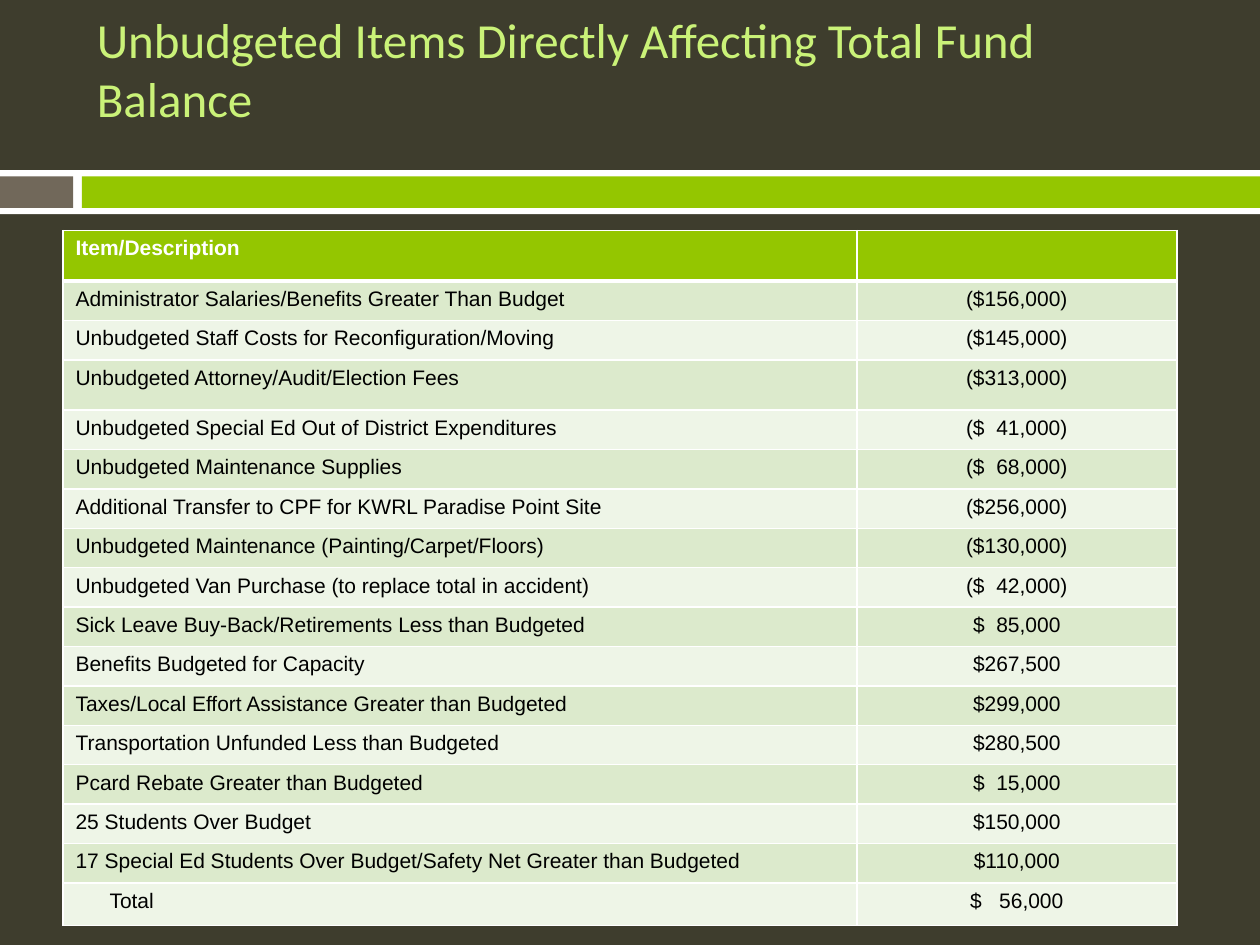
from pptx import Presentation
from pptx.dml.color import RGBColor as RGB
from pptx.enum.shapes import MSO_SHAPE as Shape
from pptx.enum.text import MSO_ANCHOR as Anchor, PP_ALIGN as Align
from pptx.oxml import parse_xml
from pptx.oxml.ns import nsdecls
from pptx.util import Inches, Pt

DARK = RGB(0x3E, 0x3D, 0x2D)
WHITE = RGB(0xFF, 0xFF, 0xFF)
BLACK = RGB(0, 0, 0)
BROWN = RGB(0x71, 0x68, 0x5A)
GREEN = RGB(0x94, 0xC6, 0x00)
LIME = RGB(0xCA, 0xF2, 0x78)
BANDS = [RGB(0xDC, 0xEA, 0xCC), RGB(0xEE, 0xF5, 0xE7)]

ITEMS = [
    ("Administrator Salaries/Benefits Greater Than Budget", "($156,000)"),
    ("Unbudgeted Staff Costs for Reconfiguration/Moving", "($145,000)"),
    ("Unbudgeted Attorney/Audit/Election Fees", "($313,000)"),
    ("Unbudgeted Special Ed Out of District Expenditures", "($  41,000)"),
    ("Unbudgeted Maintenance Supplies", "($  68,000)"),
    ("Additional Transfer to CPF for KWRL Paradise Point Site", "($256,000)"),
    ("Unbudgeted Maintenance (Painting/Carpet/Floors)", "($130,000)"),
    ("Unbudgeted Van Purchase (to replace total in accident)", "($  42,000)"),
    ("Sick Leave Buy-Back/Retirements Less than Budgeted", "$  85,000"),
    ("Benefits Budgeted for Capacity", "$267,500"),
    ("Taxes/Local Effort Assistance Greater than Budgeted", "$299,000"),
    ("Transportation Unfunded Less than Budgeted", "$280,500"),
    ("Pcard Rebate Greater than Budgeted", "$  15,000"),
    ("25 Students Over Budget", "$150,000"),
    ("17 Special Ed Students Over Budget/Safety Net Greater than Budgeted",
     "$110,000"),
    ("Total", "$   56,000"),
]
ROWS = [("Item/Description", "")] + ITEMS


def style(para, font, size, color, bold=False):
    for run in para.runs:
        run.font.name = font
        run.font.size = Pt(size)
        run.font.color.rgb = color
        run.font.bold = bold


def edge(cell, top, base):
    # Borders come before the fill in the cell properties
    props = cell._tc.get_or_add_tcPr()
    for i, (tag, width) in enumerate(
            [("lnL", 1), ("lnR", 1), ("lnT", top), ("lnB", base)]):
        props.insert(i, parse_xml(
            f'<a:{tag} {nsdecls("a")} w="{Pt(width)}"><a:solidFill>'
            f'<a:srgbClr val="{WHITE}"/></a:solidFill></a:{tag}>'))


prs = Presentation()
prs.slide_width, prs.slide_height = Inches(10), Inches(7.5)
slide = prs.slides.add_slide(prs.slide_layouts[6])
slide.background.fill.solid()
slide.background.fill.fore_color.rgb = DARK

# Band under the title
for left, top, width, height, color in [
        (0, 1.35, 10, 0.35, WHITE),
        (0, 1.4, 0.58, 0.25, BROWN),
        (0.65, 1.4, 9.35, 0.25, GREEN)]:
    bar = slide.shapes.add_shape(Shape.RECTANGLE, Inches(left), Inches(top),
                                 Inches(width), Inches(height))
    bar.shadow.inherit = False
    bar.fill.solid()
    bar.fill.fore_color.rgb = color
    bar.line.fill.background()

# Title
title = slide.shapes.add_textbox(Inches(0.67), Inches(0.25),
                                 Inches(8.92), Inches(0.58))
frame = title.text_frame
frame.word_wrap = True
frame.vertical_anchor = Anchor.MIDDLE
frame.text = "Unbudgeted Items Directly Affecting Total Fund Balance"
style(frame.paragraphs[0], "Calibri", 28, LIME)

# Table: a few taller rows, the rest share what is left
table = slide.shapes.add_table(len(ROWS), 2, Inches(0.5), Inches(1.83),
                               Inches(8.83), Inches(5.5)).table
table.columns[0].width = Inches(6.3)
table.columns[1].width = Inches(2.54)
last = len(ROWS) - 1
tall = {0: 0.38, 3: 0.4, last: 0.34}
rest = (5.5 - sum(tall.values())) / (len(ROWS) - len(tall))

for r, row in enumerate(ROWS):
    table.rows[r].height = Inches(tall.get(r, rest))
    for c, text in enumerate(row):
        cell = table.cell(r, c)
        cell.fill.solid()
        cell.fill.fore_color.rgb = BANDS[(r - 1) % 2] if r else GREEN
        edge(cell, 3 if r == 1 else 1, 1 if r else 3)
        para = cell.text_frame.paragraphs[0]
        para.text = text
        para.alignment = Align.CENTER if c else Align.LEFT
        style(para, "Arial", 12, BLACK if r else WHITE, bold=r == 0)

# Indent the total
table.cell(last, 0).margin_left = Inches(0.37)

prs.save("out.pptx")
